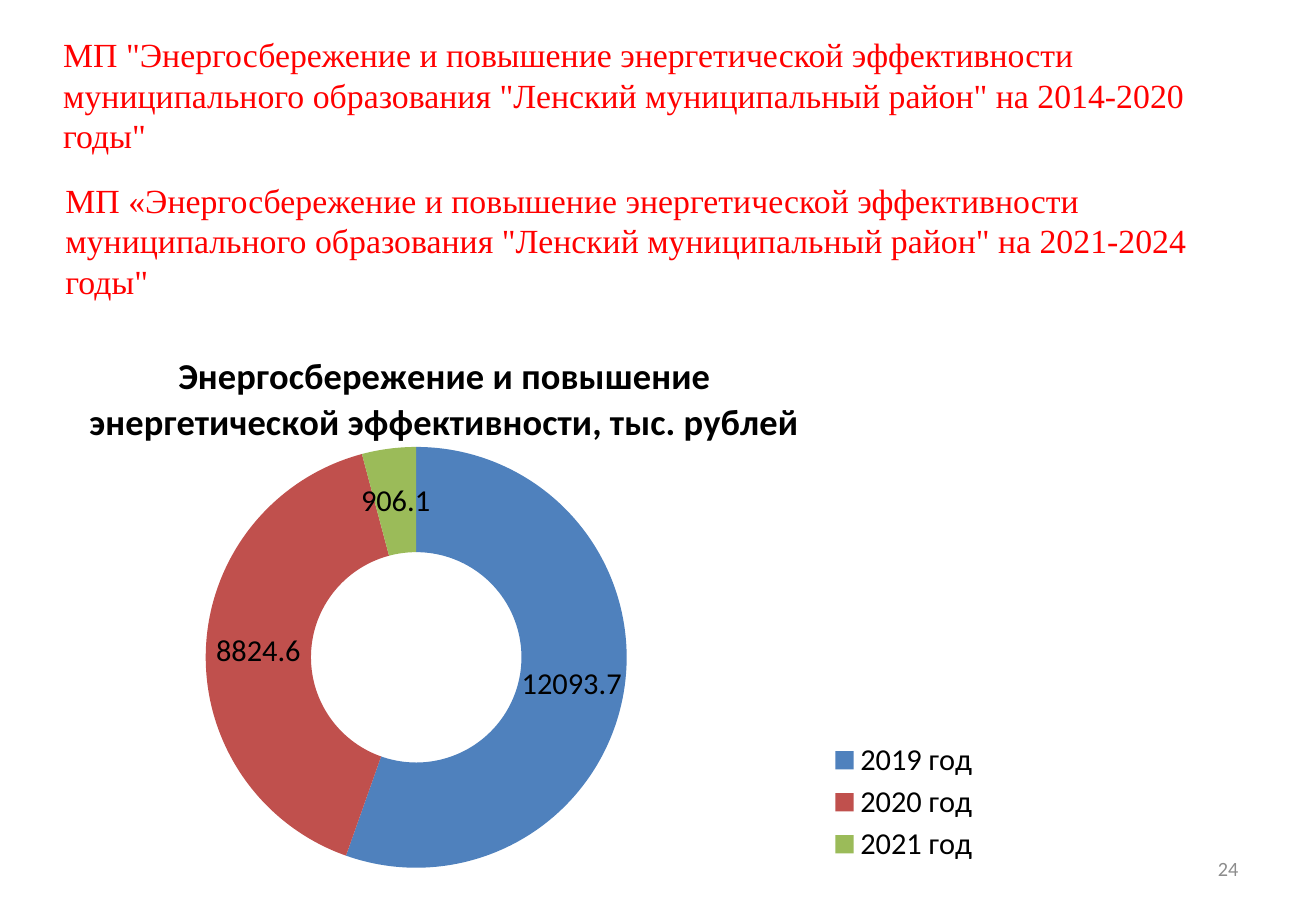
from lxml import etree
from pptx import Presentation
from pptx import util as u
from pptx.chart.data import CategoryChartData
from pptx.dml.color import RGBColor
from pptx.enum import chart as charts, text
from pptx.oxml import ns

WIDTH, HEIGHT = 10.83, 7.5
PROGRAMME = ("Энергосбережение и повышение энергетической эффективности "
             "муниципального образования \"Ленский муниципальный район\" на ")
CHART_TITLE = "Энергосбережение и повышение энергетической эффективности, тыс. рублей"
SPENDING = {"2019 год": (12093.7, "4F81BD"),
            "2020 год": (8824.6, "C0504D"),
            "2021 год": (906.1, "9BBB59")}


def paint(target, colour):
    """Set a solid fill, or the colour of a font."""
    fill = target.fill
    fill.solid()
    fill.fore_color.rgb = RGBColor.from_string(colour)


def style(font, name, size, colour, bold=False):
    font.name, font.size, font.bold = name, u.Pt(size), bold
    paint(font, colour)


def place(box, left, top, width, height):
    box.left, box.top = u.Inches(left), u.Inches(top)
    box.width, box.height = u.Inches(width), u.Inches(height)


def write(box, area, words, font, size, colour,
          align=text.PP_ALIGN.LEFT, anchor=text.MSO_ANCHOR.TOP):
    place(box, *area)
    frame = box.text_frame
    frame.word_wrap = True
    frame.auto_size = text.MSO_AUTO_SIZE.NONE
    frame.vertical_anchor = anchor
    para = frame.paragraphs[0]
    para.alignment = align
    span = para.add_run()
    span.text = words
    style(span.font, font, size, colour)


def chart_layout(parent, after=None, **shares):
    """Place a part of the chart by shares of the chart's size."""
    for old in parent.findall(ns.qn("c:layout")):
        parent.remove(old)
    layout = etree.Element(ns.qn("c:layout"))
    manual = etree.SubElement(layout, ns.qn("c:manualLayout"))
    for tag, value in shares.items():
        etree.SubElement(manual, ns.qn("c:" + tag)).set("val", str(value))
    if after:
        parent.find(ns.qn(after)).addnext(layout)
    else:
        parent.insert(0, layout)


def add_doughnut(page, area):
    data = CategoryChartData(number_format="General")
    data.categories = list(SPENDING)
    data.add_series(CHART_TITLE, [value for value, _ in SPENDING.values()])
    chart = page.shapes.add_chart(charts.XL_CHART_TYPE.DOUGHNUT,
                                  *map(u.Inches, area), data).chart
    style(chart.font, "Calibri", 18, "000000")

    # Ring and values
    plot = chart.plots[0]
    plot.vary_by_categories = True
    for index, (_, colour) in enumerate(SPENDING.values()):
        paint(plot.series[0].points[index].format, colour)
    plot.has_data_labels = True
    plot.data_labels.show_value = True
    plot.data_labels.show_percentage = False
    chart_layout(chart._chartSpace.chart.plotArea, layoutTarget="inner",
                 xMode="edge", yMode="edge", x=0.09, y=0.22, w=0.51, h=0.77)

    # Chart title
    chart.has_title = True
    span = chart.chart_title.text_frame.paragraphs[0].add_run()
    span.text = CHART_TITLE
    style(span.font, "Calibri", 21.6, "000000", bold=True)
    chart_layout(chart.chart_title._element, "c:tx",
                 xMode="edge", yMode="edge", x=0.01, y=0.03)

    # Legend
    chart.has_legend = True
    chart.legend.position = charts.XL_LEGEND_POSITION.RIGHT
    chart.legend.include_in_layout = False
    chart_layout(chart.legend._element, "c:legendPos",
                 xMode="edge", yMode="edge", x=0.74, y=0.75, w=0.19, h=0.24)


def main():
    deck = Presentation()
    deck.slide_width, deck.slide_height = u.Inches(WIDTH), u.Inches(HEIGHT)
    page = deck.slides.add_slide(deck.slide_layouts[5])

    def new_box():
        return page.shapes.add_textbox(0, 0, 0, 0)

    # Programme names
    write(page.shapes.title, (0.42, 0.23, 10.12, 1.11),
          "МП \"" + PROGRAMME + "2014-2020 годы\"", "Times New Roman", 20, "FF0000")
    write(new_box(), (0.44, 1.43, 9.97, 1.11),
          "МП «" + PROGRAMME + "2021-2024 годы\"", "Times New Roman", 20, "FF0000")

    # Spending by year
    add_doughnut(page, (0.6, 2.69, 8.19, 4.5))

    # Page number
    write(new_box(), (7.76, 6.95, 2.53, 0.4), "24", "Calibri", 12, "8C8C8C",
          text.PP_ALIGN.RIGHT, text.MSO_ANCHOR.MIDDLE)
    deck.save("out.pptx")


if __name__ == "__main__":
    main()
